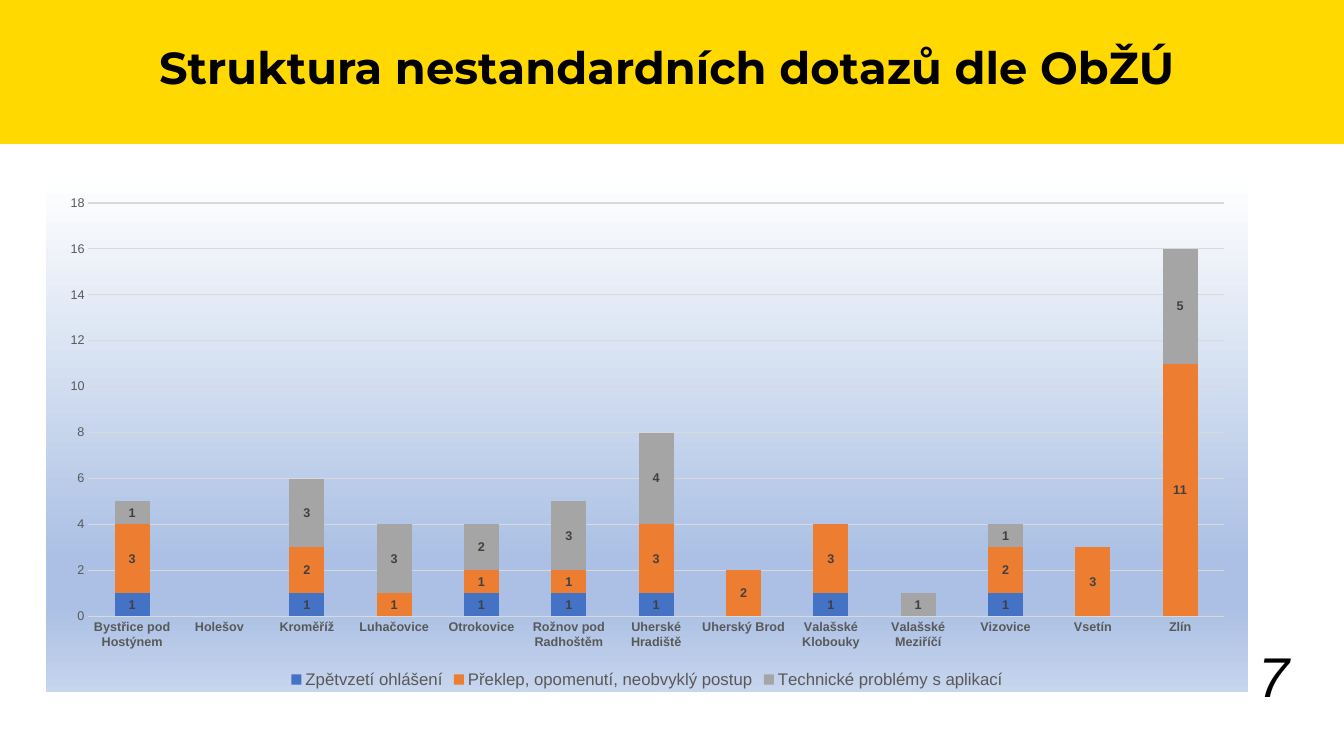
from dataclasses import dataclass

from lxml import etree
from pptx import Presentation
from pptx.chart.chart import Chart
from pptx.chart.data import CategoryChartData
from pptx.dml.color import RGBColor
from pptx.enum.chart import XL_CHART_TYPE, XL_LEGEND_POSITION, XL_TICK_MARK
from pptx.enum.shapes import MSO_SHAPE
from pptx.enum.text import MSO_ANCHOR, MSO_AUTO_SIZE, PP_ALIGN
from pptx.oxml import parse_xml
from pptx.oxml.ns import qn
from pptx.slide import Slide
from pptx.text.text import Font
from pptx.util import Cm, Pt

STACKED = XL_CHART_TYPE.COLUMN_STACKED
LEGEND_BOTTOM = XL_LEGEND_POSITION.BOTTOM
NO_TICK = XL_TICK_MARK.NONE
RECTANGLE = MSO_SHAPE.RECTANGLE
TOP, BOTTOM = MSO_ANCHOR.TOP, MSO_ANCHOR.BOTTOM
CENTER, RIGHT = PP_ALIGN.CENTER, PP_ALIGN.RIGHT
NO_AUTOFIT = MSO_AUTO_SIZE.NONE
TITLE_ONLY_LAYOUT = 5


@dataclass(frozen=True)
class Theme:
    title_font: str = "Montserrat"
    body_font: str = "Arial"
    band: str = "FFD900"
    text: str = "000000"
    axis_text: str = "595959"
    label_text: str = "404040"
    grid: str = "D9D9D9"
    gradient: tuple[tuple[int, str], ...] = (
        (0, "FDFEFE"), (74, "ABC0E4"), (83, "ABC0E4"), (100, "C7D5ED"))
    title_size: int = 32
    number_size: int = 40
    chart_size: int = 10
    axis_size: int = 9
    legend_size: int = 12


@dataclass(frozen=True)
class Box:
    left: float
    top: float
    width: float
    height: float

    def lengths(self) -> tuple[Cm, Cm, Cm, Cm]:
        return Cm(self.left), Cm(self.top), Cm(self.width), Cm(self.height)


@dataclass(frozen=True)
class QuerySeries:
    name: str
    color: str
    counts: tuple[int | None, ...]


THEME = Theme()
SLIDE_WIDTH, SLIDE_HEIGHT = 33.87, 19.05
BAND_BOX = Box(0, 0, SLIDE_WIDTH, 3.63)
TITLE_BOX = Box(1.17, 1.02, 31.29, 2.59)
CHART_BOX = Box(1.17, 4.67, 30.28, 12.78)
NUMBER_BOX = Box(25.12, 16.54, 7.62, 1.45)
PLOT_LAYOUT = {"x": 0.035, "y": 0.035, "w": 0.945, "h": 0.815}

OFFICES = (
    "Bystřice pod Hostýnem", "Holešov", "Kroměříž", "Luhačovice", "Otrokovice",
    "Rožnov pod Radhoštěm", "Uherské Hradiště", "Uherský Brod",
    "Valašské Klobouky", "Valašské Meziříčí", "Vizovice", "Vsetín", "Zlín",
)
QUERIES = (
    QuerySeries("Zpětvzetí ohlášení", "4472C4",
                (1, None, 1, None, 1, 1, 1, None, 1, None, 1, None, None)),
    QuerySeries("Překlep, opomenutí, neobvyklý postup", "ED7D31",
                (3, None, 2, 1, 1, 1, 3, 2, 3, None, 2, 3, 11)),
    QuerySeries("Technické problémy s aplikací", "A5A5A5",
                (1, None, 3, 3, 2, 3, 4, None, None, 1, 1, None, 5)),
)


def style_font(font: Font, size: int, color: str, name: str = THEME.body_font,
               bold: bool = False, italic: bool = False) -> None:
    font.name = name
    font.size = Pt(size)
    font.bold = bold
    font.italic = italic
    font.color.rgb = RGBColor.from_string(color)


def add_band(slide: Slide) -> None:
    band = slide.shapes.add_shape(RECTANGLE, *BAND_BOX.lengths())
    band.shadow.inherit = False
    band.fill.solid()
    band.fill.fore_color.rgb = RGBColor.from_string(THEME.band)
    band.line.fill.background()
    band.element.getparent().insert(2, band.element)


def fill_title(slide: Slide, text: str) -> None:
    title = slide.shapes.title
    title.left, title.top, title.width, title.height = TITLE_BOX.lengths()
    frame = title.text_frame
    frame.text = text
    frame.auto_size = NO_AUTOFIT
    frame.vertical_anchor = TOP
    paragraph = frame.paragraphs[0]
    paragraph.alignment = CENTER
    paragraph.line_spacing = 0.9
    style_font(paragraph.runs[0].font, THEME.title_size, THEME.text,
               THEME.title_font, bold=True)


def add_page_number(slide: Slide, text: str) -> None:
    frame = slide.shapes.add_textbox(*NUMBER_BOX.lengths()).text_frame
    frame.text = text
    frame.word_wrap = True
    frame.vertical_anchor = BOTTOM
    paragraph = frame.paragraphs[0]
    paragraph.alignment = RIGHT
    style_font(paragraph.runs[0].font, THEME.number_size, THEME.text, italic=True)


def fill_chart_area(chart: Chart) -> None:
    stops = "".join(
        f'<a:gs pos="{percent * 1000}"><a:srgbClr val="{color}"/></a:gs>'
        for percent, color in THEME.gradient)
    properties = parse_xml(
        '<c:spPr xmlns:c="http://schemas.openxmlformats.org/drawingml/2006/chart"'
        ' xmlns:a="http://schemas.openxmlformats.org/drawingml/2006/main">'
        f'<a:gradFill><a:gsLst>{stops}</a:gsLst><a:lin ang="5400000" scaled="0"/>'
        '</a:gradFill><a:ln><a:noFill/></a:ln></c:spPr>')
    chart.element.find(qn("c:chart")).addnext(properties)


def place_plot(chart: Chart) -> None:
    plot_area = chart.element.find(qn("c:chart")).find(qn("c:plotArea"))
    for layout in plot_area.findall(qn("c:layout")):
        plot_area.remove(layout)
    layout = etree.Element(qn("c:layout"))
    manual = etree.SubElement(layout, qn("c:manualLayout"))
    settings = {"layoutTarget": "inner", "xMode": "edge", "yMode": "edge", **PLOT_LAYOUT}
    for tag, value in settings.items():
        etree.SubElement(manual, qn(f"c:{tag}")).set("val", str(value))
    plot_area.insert(0, layout)


def style_axes(chart: Chart) -> None:
    for axis, bold in ((chart.category_axis, True), (chart.value_axis, False)):
        axis.major_tick_mark = NO_TICK
        axis.minor_tick_mark = NO_TICK
        axis.format.line.fill.background()
        style_font(axis.tick_labels.font, THEME.axis_size, THEME.axis_text, bold=bold)
    value_axis = chart.value_axis
    value_axis.minimum_scale = 0
    value_axis.maximum_scale = 18
    value_axis.major_unit = 2
    grid_line = value_axis.major_gridlines.format.line
    grid_line.color.rgb = RGBColor.from_string(THEME.grid)
    grid_line.width = Pt(0.75)


def add_query_chart(slide: Slide) -> None:
    data = CategoryChartData()
    data.categories = OFFICES
    for query in QUERIES:
        data.add_series(query.name, query.counts)
    chart = slide.shapes.add_chart(STACKED, *CHART_BOX.lengths(), data).chart
    chart.has_title = False
    style_font(chart.font, THEME.chart_size, THEME.text)
    chart.has_legend = True
    chart.legend.position = LEGEND_BOTTOM
    chart.legend.include_in_layout = False
    style_font(chart.legend.font, THEME.legend_size, THEME.axis_text)
    plot = chart.plots[0]
    plot.gap_width = 150
    plot.overlap = 100
    plot.vary_by_categories = False
    for series, query in zip(plot.series, QUERIES):
        series.format.fill.solid()
        series.format.fill.fore_color.rgb = RGBColor.from_string(query.color)
        series.data_labels.show_value = True
        style_font(series.data_labels.font, THEME.axis_size, THEME.label_text, bold=True)
    style_axes(chart)
    place_plot(chart)
    fill_chart_area(chart)


def main() -> None:
    presentation = Presentation()
    presentation.slide_width = Cm(SLIDE_WIDTH)
    presentation.slide_height = Cm(SLIDE_HEIGHT)
    slide = presentation.slides.add_slide(presentation.slide_layouts[TITLE_ONLY_LAYOUT])
    add_band(slide)
    fill_title(slide, "Struktura nestandardních dotazů dle ObŽÚ")
    add_query_chart(slide)
    add_page_number(slide, "7")
    presentation.save("out.pptx")


if __name__ == "__main__":
    main()
